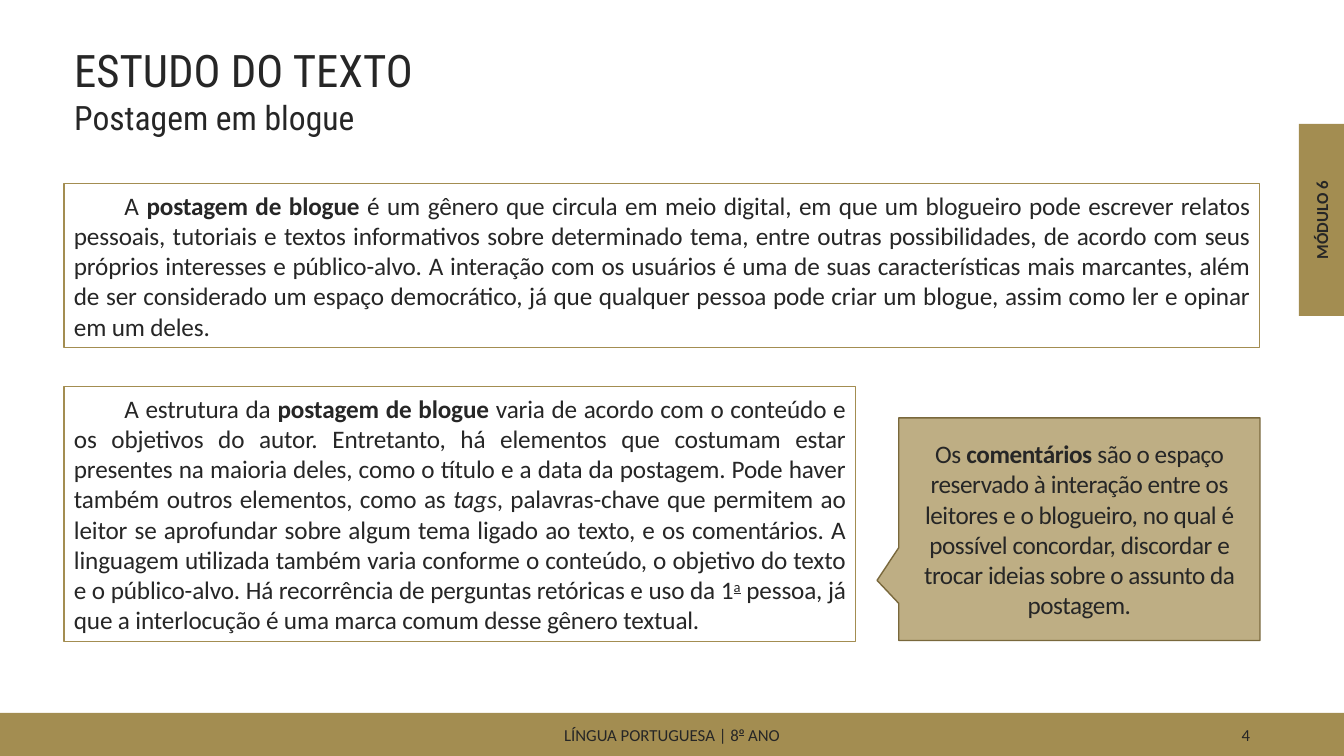
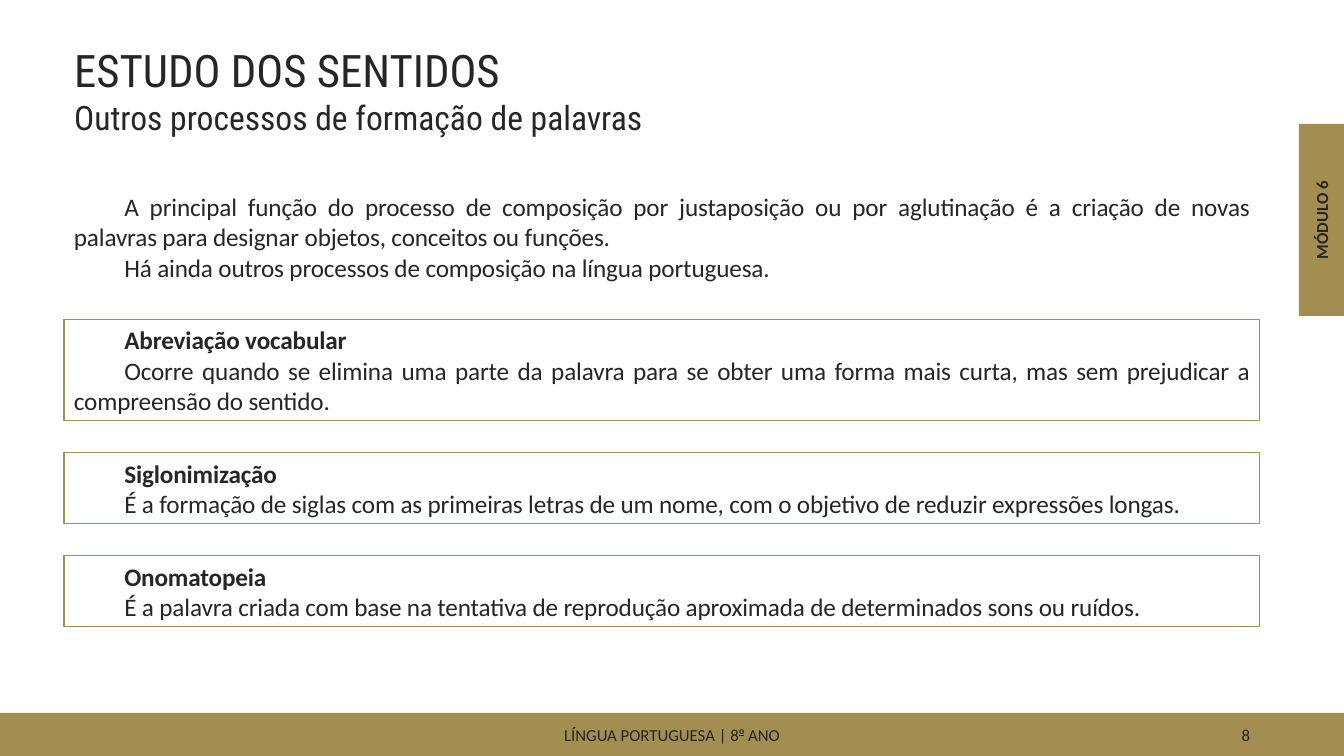
from dataclasses import dataclass

from lxml.etree import SubElement
from pptx import Presentation
from pptx.dml.color import RGBColor
from pptx.enum.shapes import MSO_SHAPE
from pptx.enum.text import MSO_ANCHOR, MSO_AUTO_SIZE, PP_ALIGN
from pptx.oxml.ns import qn
from pptx.shapes.autoshape import Shape
from pptx.slide import Slide
from pptx.util import Emu, Pt

# Shared look
GOLD = RGBColor(0xA3, 0x8D, 0x51)
DARK_GOLD = RGBColor(0x79, 0x68, 0x3C)
INK = RGBColor(0x26, 0x26, 0x26)
BODY_FONT = "Calibri"
TITLE_FONT = "Roboto Condensed"

# Shared grid, in px
PX = 9525
SLIDE_W, SLIDE_H = 1280, 720
LEFT, RIGHT = 61, 1200
FULL_W = RIGHT - LEFT
FOOTER_TOP = 679
INDENT = 48
STACK_GAP = 30


def px(n: int) -> Emu:
    return Emu(n * PX)


@dataclass(frozen=True)
class Box:
    left: int
    top: int
    width: int
    height: int

    def emu(self) -> tuple[Emu, Emu, Emu, Emu]:
        return px(self.left), px(self.top), px(self.width), px(self.height)


@dataclass(frozen=True)
class Span:
    text: str
    bold: bool = False
    italic: bool = False
    underline: bool = False
    baseline: int = 0  # percent


@dataclass(frozen=True)
class TextStyle:
    size: int
    align: PP_ALIGN
    spacing: int = 0  # hundredths of a point
    indent: int = 0
    space_after: int = 0


@dataclass(frozen=True)
class Definition:
    term: str
    meaning: str
    height: int


Paragraphs = list[list[Span]]

BODY = TextStyle(18, PP_ALIGN.JUSTIFY, spacing=-10, indent=INDENT)
CALLOUT = TextStyle(18, PP_ALIGN.CENTER, spacing=-30)
FOOTER = TextStyle(12, PP_ALIGN.CENTER, space_after=6)
PAGE_NUMBER = TextStyle(12, PP_ALIGN.RIGHT, space_after=6)
TAB_LABEL = TextStyle(12, PP_ALIGN.CENTER)

TAB = Box(1237, 118, SLIDE_W - 1237, 183)
FOOTER_TEXT = [[Span("LÍNGUA PORTUGUESA | 8"),
                Span("o", bold=True, underline=True, baseline=45),
                Span(" ANO")]]

# Texts of the slides
BLOG_POST = [[
    Span("A "),
    Span("postagem de blogue ", bold=True),
    Span("é um gênero que circula em meio digital, em que um blogueiro pode "
         "escrever relatos pessoais, tutoriais e textos informativos sobre "
         "determinado tema, entre outras possibilidades, de acordo com seus "
         "próprios interesses e público-alvo. A interação com os usuários é "
         "uma de suas características mais marcantes, além de ser considerado "
         "um espaço democrático, já que qualquer pessoa pode criar um blogue, "
         "assim como ler e opinar em um deles."),
]]
STRUCTURE = [[
    Span("A estrutura da "),
    Span("postagem de blogue ", bold=True),
    Span("varia de acordo com o conteúdo e os objetivos do autor. Entretanto, "
         "há elementos que costumam estar presentes na maioria deles, como o "
         "título e a data da postagem. Pode haver também outros elementos, "
         "como as "),
    Span("tags", italic=True),
    Span(", palavras-chave que permitem ao leitor se aprofundar sobre algum "
         "tema ligado ao texto, e os comentários. A linguagem utilizada também "
         "varia conforme o conteúdo, o objetivo do texto e o público-alvo. Há "
         "recorrência de perguntas retóricas e uso da 1"),
    Span("a", underline=True, baseline=30),
    Span(" pessoa, já que a interlocução é uma marca comum desse gênero "
         "textual."),
]]
COMMENTS = [[
    Span("Os "),
    Span("comentários", bold=True),
    Span(" são o espaço reservado à interação entre os leitores e o blogueiro, "
         "no qual é possível concordar, discordar e trocar ideias sobre o "
         "assunto da postagem."),
]]
INTRO = [
    [Span("A principal função do processo de composição por justaposição ou "
          "por aglutinação é a criação de novas palavras para designar "
          "objetos, conceitos ou funções.")],
    [Span("Há ainda outros processos de composição na língua portuguesa.")],
]
DEFINITIONS = [
    Definition("Abreviação vocabular",
               "Ocorre quando se elimina uma parte da palavra para se obter "
               "uma forma mais curta, mas sem prejudicar a compreensão do "
               "sentido.", 97),
    Definition("Siglonimização",
               "É a formação de siglas com as primeiras letras de um nome, com "
               "o objetivo de reduzir expressões longas.", 68),
    Definition("Onomatopeia",
               "É a palavra criada com base na tentativa de reprodução "
               "aproximada de determinados sons ou ruídos.", 68),
]


# Drawing helpers
def write(sp: Shape, paragraphs: Paragraphs, style: TextStyle) -> None:
    tf = sp.text_frame
    tf.word_wrap = True
    tf.vertical_anchor = MSO_ANCHOR.MIDDLE
    for i, spans in enumerate(paragraphs):
        p = tf.add_paragraph() if i else tf.paragraphs[0]
        p.alignment = style.align
        p.space_after = Pt(style.space_after)
        if style.indent:
            p_pr = p._p.get_or_add_pPr()
            p_pr.set("marL", "0")
            p_pr.set("indent", str(px(style.indent)))
        for span in spans:
            r = p.add_run()
            r.text = span.text
            r.font.name = BODY_FONT
            r.font.size = Pt(style.size)
            r.font.color.rgb = INK
            r.font.bold = span.bold
            r.font.italic = span.italic
            r.font.underline = span.underline
            r_pr = r._r.get_or_add_rPr()
            if style.spacing:
                r_pr.set("spc", str(style.spacing))
            if span.baseline:
                r_pr.set("baseline", str(span.baseline * 1000))


def add_text(s: Slide, box: Box, paragraphs: Paragraphs,
             style: TextStyle) -> Shape:
    sp = s.shapes.add_textbox(*box.emu())
    write(sp, paragraphs, style)
    return sp


def add_band(s: Slide, box: Box) -> None:
    sp = s.shapes.add_shape(MSO_SHAPE.RECTANGLE, *box.emu())
    sp.shadow.inherit = False
    sp.fill.solid()
    sp.fill.fore_color.rgb = GOLD
    sp.line.fill.background()


def add_framed_text(s: Slide, box: Box, paragraphs: Paragraphs) -> None:
    sp = s.shapes.add_shape(MSO_SHAPE.RECTANGLE, *box.emu())
    sp.shadow.inherit = False
    sp.fill.background()
    sp.line.color.rgb = GOLD
    sp.line.width = Pt(0.75)
    write(sp, paragraphs, BODY)


def add_callout(s: Slide, box: Box, paragraphs: Paragraphs) -> None:
    sp = s.shapes.add_shape(MSO_SHAPE.RECTANGULAR_CALLOUT, *box.emu())
    sp.adjustments[0], sp.adjustments[1] = -0.56, 0.23
    sp.shadow.inherit = False
    sp.fill.solid()
    sp.fill.fore_color.rgb = GOLD
    color = sp._element.spPr.find(qn("a:solidFill")).find(qn("a:srgbClr"))
    SubElement(color, qn("a:alpha")).set("val", "70000")
    sp.line.color.rgb = DARK_GOLD
    sp.line.width = Pt(1)
    write(sp, paragraphs, CALLOUT)


def add_title(s: Slide, title: str, subtitle: str) -> None:
    sp = s.shapes.title
    sp.left, sp.top, sp.width, sp.height = Box(LEFT, 36, 893, 100).emu()
    tf = sp.text_frame
    tf.text = f"{title}\n{subtitle}"
    tf.word_wrap = True
    tf.auto_size = MSO_AUTO_SIZE.NONE
    tf.vertical_anchor = MSO_ANCHOR.TOP
    for p, size in zip(tf.paragraphs, (32, 24)):
        p.alignment = PP_ALIGN.LEFT
        for r in p.runs:
            r.font.name = TITLE_FONT
            r.font.size = Pt(size)
            r.font.color.rgb = INK


def add_page(prs: Presentation, title: str, subtitle: str,
             number: int) -> Slide:
    s = prs.slides.add_slide(prs.slide_layouts[5])
    # Footer
    add_band(s, Box(0, FOOTER_TOP, SLIDE_W, SLIDE_H - FOOTER_TOP))
    add_text(s, Box(424, 682, 432, 36), FOOTER_TEXT, FOOTER)
    add_text(s, Box(904, 682, RIGHT - 904, 36), [[Span(str(number))]],
             PAGE_NUMBER)
    # Module tab, with its label turned upwards
    add_band(s, TAB)
    label_h = 29
    label = Box(TAB.left + (TAB.width - TAB.height) // 2,
                TAB.top + (TAB.height - label_h) // 2, TAB.height, label_h)
    sp = add_text(s, label, [[Span("MÓDULO 6", bold=True)]], TAB_LABEL)
    sp.rotation = 270
    add_title(s, title, subtitle)
    return s


# Slides
def add_blog_slide(prs: Presentation) -> None:
    s = add_page(prs, "ESTUDO DO TEXTO", "Postagem em blogue", 4)
    add_framed_text(s, Box(LEFT, 175, FULL_W, 156), BLOG_POST)
    add_framed_text(s, Box(LEFT, 368, 754, 243), STRUCTURE)
    add_callout(s, Box(856, 398, RIGHT - 856, 212), COMMENTS)


def add_word_formation_slide(prs: Presentation) -> None:
    s = add_page(prs, "ESTUDO DOS SENTIDOS",
                 "Outros processos de formação de palavras", 8)
    intro = Box(LEFT, 177, FULL_W, 97)
    add_text(s, intro, INTRO, BODY)
    top = intro.top + intro.height + STACK_GAP
    for item in DEFINITIONS:
        add_framed_text(s, Box(LEFT, top, FULL_W, item.height),
                        [[Span(item.term, bold=True)], [Span(item.meaning)]])
        top += item.height + STACK_GAP


def main() -> None:
    prs = Presentation()
    prs.slide_width, prs.slide_height = px(SLIDE_W), px(SLIDE_H)
    add_blog_slide(prs)
    add_word_formation_slide(prs)
    prs.save("out.pptx")


if __name__ == "__main__":
    main()
